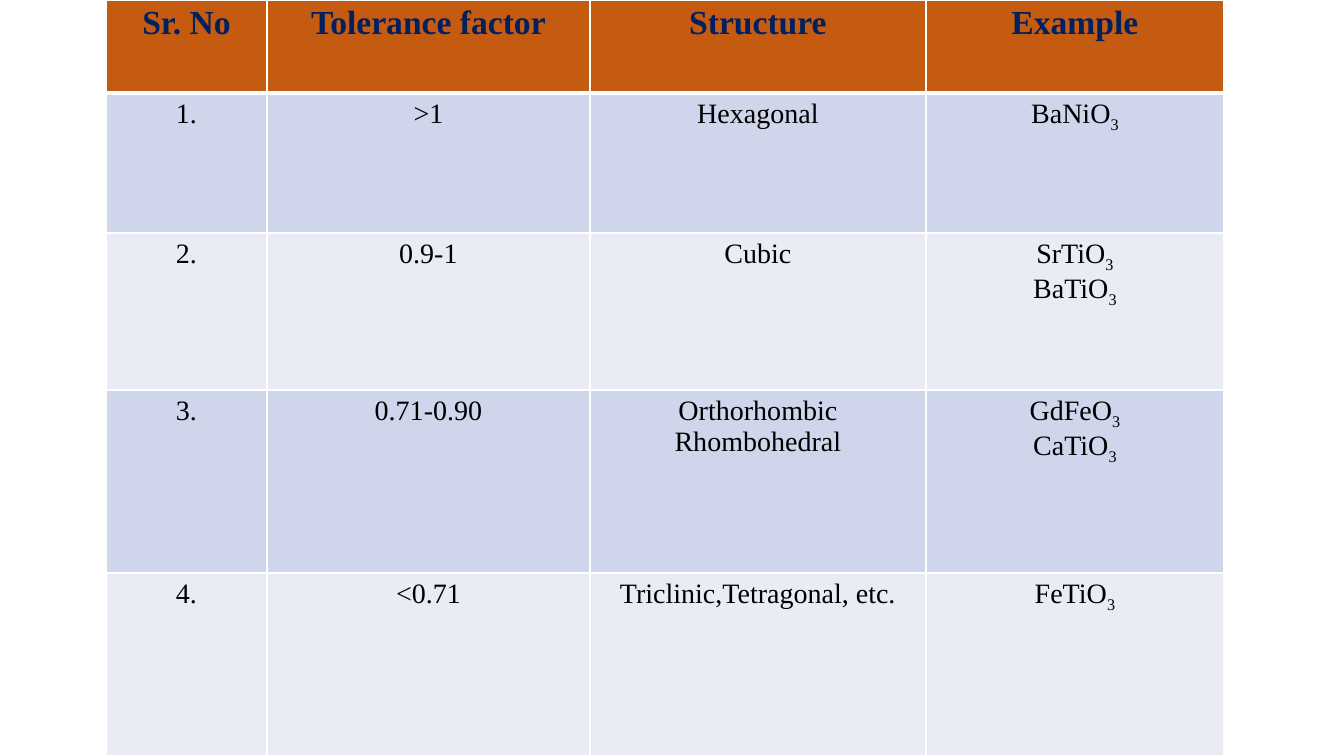
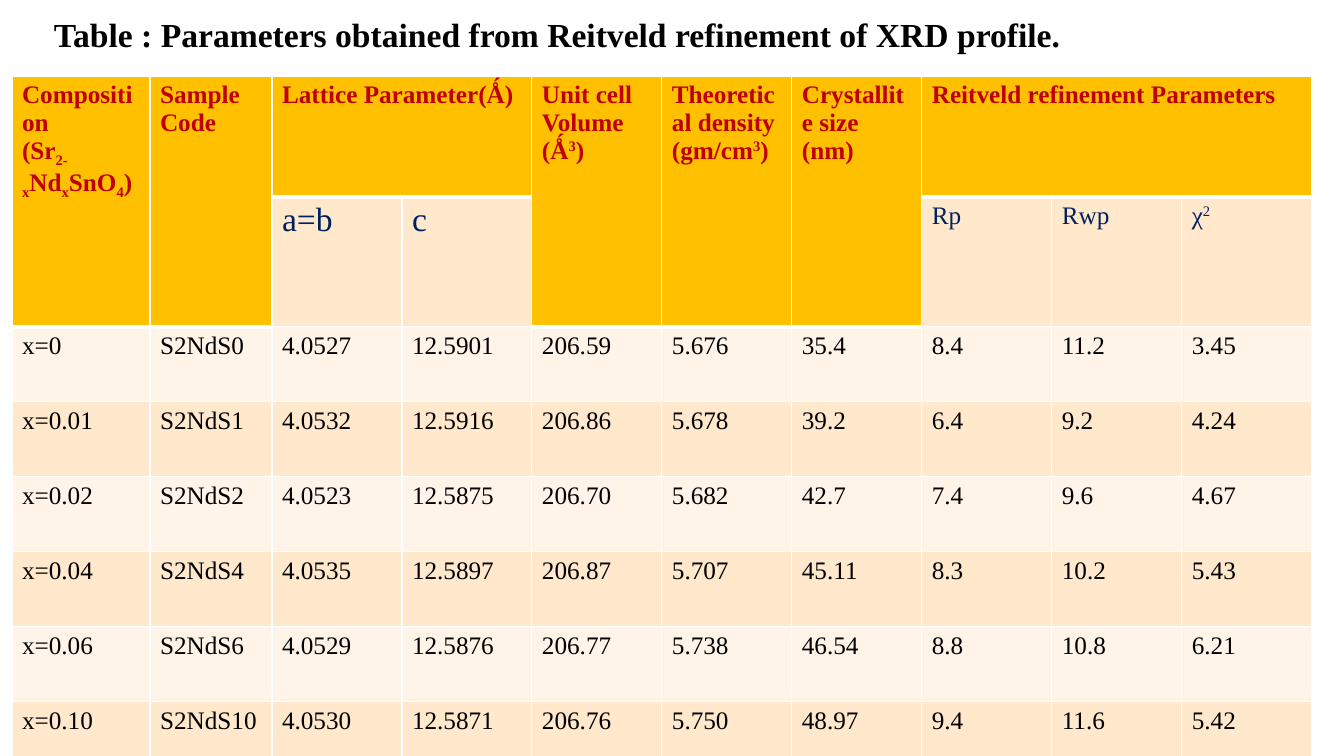
from lxml import etree
from pptx import Presentation
from pptx.dml.color import RGBColor
from pptx.enum.text import MSO_AUTO_SIZE, PP_ALIGN
from pptx.oxml.ns import qn
from pptx.util import Emu, Pt

CENTER, LEFT = PP_ALIGN.CENTER, PP_ALIGN.LEFT
FIT_SHAPE = MSO_AUTO_SIZE.SHAPE_TO_FIT_TEXT

PX_PER_INCH = 100.8
EMU_PER_PX = 914400 / PX_PER_INCH
SLIDE_WIDTH, SLIDE_HEIGHT = 1344, 756
FONT = "Times New Roman"
THIN, HEAVY = 1, 3
BASELINES = {"_": "-25000", "^": "30000"}

BLACK = RGBColor(0x00, 0x00, 0x00)
WHITE = RGBColor(0xFF, 0xFF, 0xFF)
NAVY = RGBColor(0x00, 0x20, 0x60)
RED = RGBColor(0xC0, 0x00, 0x00)
RUST = RGBColor(0xC5, 0x5A, 0x11)
GOLD = RGBColor(0xFF, 0xC0, 0x00)
BLUE_BANDS = RGBColor(0xE9, 0xEB, 0xF5), RGBColor(0xCF, 0xD5, 0xEA)
PEACH_BANDS = RGBColor(0xFF, 0xF4, 0xE7), RGBColor(0xFF, 0xE8, 0xCC)

TITLE = {
    "text": "Table : Parameters obtained from Reitveld refinement of XRD profile.",
    "area": (44, 9, 1028, 50),
    "format": {"size": Pt(24), "bold": True, "color": BLACK},
}

STRUCTURES = {
    "origin": (106, 0),
    "columns": [161, 323, 336, 298],
    "heights": [93, 140, 157, 183, 183],
    "align": CENTER,
    "header_fill": RUST,
    "bands": BLUE_BANDS,
    "header": {"size": Pt(24), "bold": True, "color": NAVY},
    "body": {"size": Pt(20), "bold": False, "color": BLACK},
    "special": {},
    "merges": [],
    "rows": [
        ("Sr. No", "Tolerance factor", "Structure", "Example"),
        ("1.", ">1", "Hexagonal", "BaNiO|_3"),
        ("2.", "0.9-1", "Cubic", "SrTiO|_3\nBaTiO|_3"),
        ("3.", "0.71-0.90", "Orthorhombic\nRhombohedral", "GdFeO|_3\nCaTiO|_3"),
        ("4.", "<0.71", "Triclinic,Tetragonal, etc.", "FeTiO|_3"),
    ],
}

SYMBOL = {"size": Pt(24), "color": NAVY}
FACTOR = {"color": NAVY}

REFINEMENT = {
    "origin": (12, 76),
    "columns": [138, 122] + [130] * 8,
    "heights": [121, 129] + [75] * 6,
    "align": LEFT,
    "header_fill": GOLD,
    "bands": PEACH_BANDS,
    "header": {"size": Pt(18), "bold": True, "color": RED},
    "body": {"size": Pt(18), "bold": False, "color": BLACK},
    "special": {(1, 2): SYMBOL, (1, 3): SYMBOL,
                (1, 7): FACTOR, (1, 8): FACTOR, (1, 9): FACTOR},
    "merges": [((0, column), (1, column)) for column in (0, 1, 4, 5, 6)]
              + [((0, 2), (0, 3)), ((0, 7), (0, 9))],
    "rows": [
        ("Composition\n(Sr|_2-x|Nd|_x|SnO|_4|)", "Sample Code",
         "Lattice Parameter(Ǻ)", None, "Unit cell Volume (Ǻ|^3|)",
         "Theoretical density (gm/cm|^3|)", "Crystallite size (nm)",
         "Reitveld refinement Parameters", None, None),
        (None, None, "a=b", "c", None, None, None, "Rp", "Rwp", "χ|^2"),
        ("x=0", "S2NdS0", "4.0527", "12.5901", "206.59", "5.676", "35.4", "8.4", "11.2", "3.45"),
        ("x=0.01", "S2NdS1", "4.0532", "12.5916", "206.86", "5.678", "39.2", "6.4", "9.2", "4.24"),
        ("x=0.02", "S2NdS2", "4.0523", "12.5875", "206.70", "5.682", "42.7", "7.4", "9.6", "4.67"),
        ("x=0.04", "S2NdS4", "4.0535", "12.5897", "206.87", "5.707", "45.11", "8.3", "10.2", "5.43"),
        ("x=0.06", "S2NdS6", "4.0529", "12.5876", "206.77", "5.738", "46.54", "8.8", "10.8", "6.21"),
        ("x=0.10", "S2NdS10", "4.0530", "12.5871", "206.76", "5.750", "48.97", "9.4", "11.6", "5.42"),
    ],
}


def px(length):
    return Emu(round(length * EMU_PER_PX))


def write_text(frame, text, style, align):
    for index, line in enumerate(text.split("\n")):
        para = frame.paragraphs[0] if index == 0 else frame.add_paragraph()
        para.alignment = align
        for piece in line.split("|"):
            span = para.add_run()
            baseline = BASELINES.get(piece[0])
            span.text = piece[1:] if baseline else piece
            span.font.name = FONT
            for name, value in style.items():
                if name == "color":
                    span.font.color.rgb = value
                else:
                    setattr(span.font, name, value)
            if baseline:
                span.font._element.set("baseline", baseline)


def set_borders(cell, top, bottom):
    properties = cell._tc.get_or_add_tcPr()
    sides = {"a:lnL": THIN, "a:lnR": THIN, "a:lnT": top, "a:lnB": bottom}
    for index, (side, weight) in enumerate(sides.items()):
        line = etree.Element(qn(side), w=str(Pt(weight)))
        fill = etree.SubElement(line, qn("a:solidFill"))
        etree.SubElement(fill, qn("a:srgbClr"), val=str(WHITE))
        properties.insert(index, line)


def add_grid(page, content):
    rows, columns, heights = content["rows"], content["columns"], content["heights"]
    area = (*content["origin"], sum(columns), sum(heights))
    grid = page.shapes.add_table(len(rows), len(columns), *map(px, area)).table
    grid.first_row = grid.horz_banding = False
    for column, width in zip(grid.columns, columns):
        column.width = px(width)
    for row, height in zip(grid.rows, heights):
        row.height = px(height)
    for first, last in content["merges"]:
        grid.cell(*first).merge(grid.cell(*last))

    headed = [[r == 0 or text is None for text in row] for r, row in enumerate(rows)]
    for r, row in enumerate(rows):
        for c, text in enumerate(row):
            cell, is_header = grid.cell(r, c), headed[r][c]
            above = r > 0 and headed[r - 1][c]
            below = r + 1 < len(rows) and headed[r + 1][c]
            cell.fill.solid()
            cell.fill.fore_color.rgb = (
                content["header_fill"] if is_header else content["bands"][r % 2])
            set_borders(cell,
                        HEAVY if above and not is_header else THIN,
                        HEAVY if is_header and not below else THIN)
            if text is not None:
                base = content["header"] if is_header else content["body"]
                style = {**base, **content["special"].get((r, c), {})}
                write_text(cell.text_frame, text, style, content["align"])


def add_title(page, title):
    box = page.shapes.add_textbox(*map(px, title["area"]))
    frame = box.text_frame
    frame.word_wrap = False
    frame.auto_size = FIT_SHAPE
    write_text(frame, title["text"], title["format"], LEFT)


def main():
    deck = Presentation()
    deck.slide_width, deck.slide_height = px(SLIDE_WIDTH), px(SLIDE_HEIGHT)
    blank = deck.slide_layouts[6]
    for content, title in ((STRUCTURES, None), (REFINEMENT, TITLE)):
        page = deck.slides.add_slide(blank)
        add_grid(page, content)
        if title:
            add_title(page, title)
    deck.save("out.pptx")


if __name__ == "__main__":
    main()
